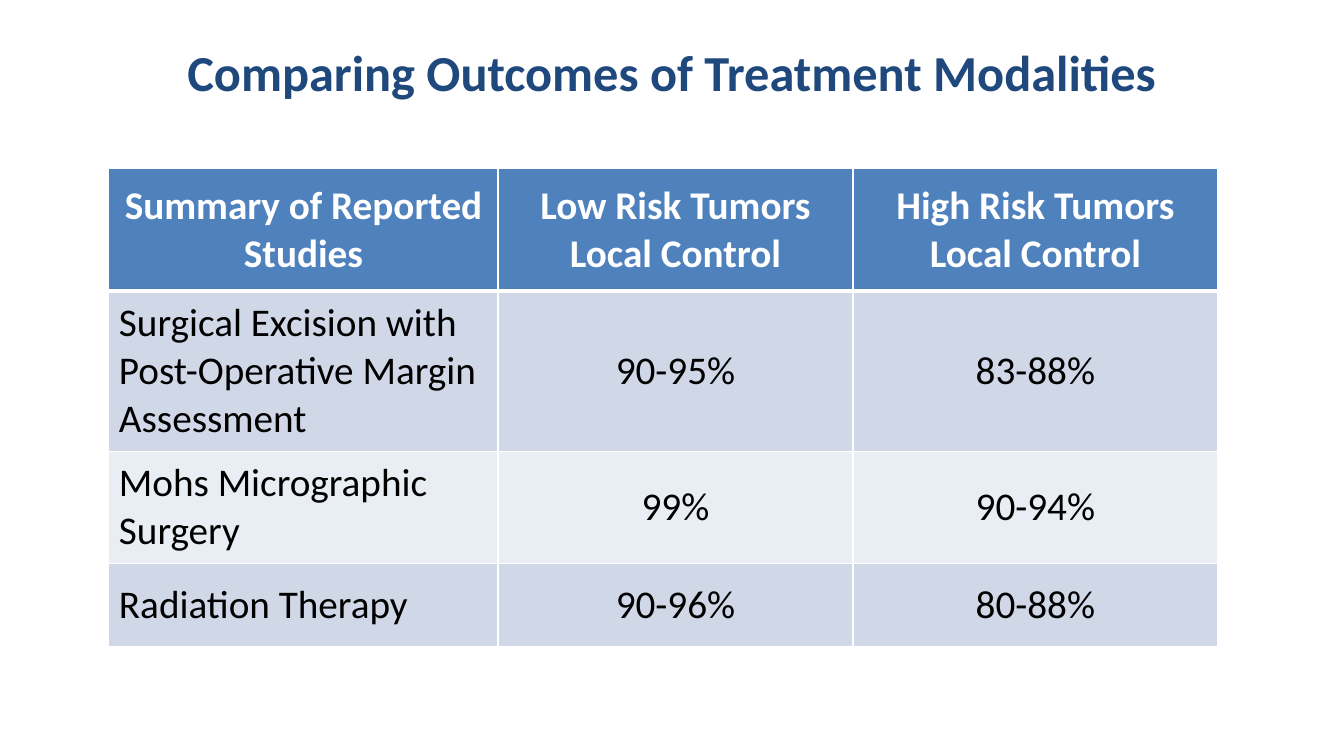
from lxml.etree import SubElement
from pptx import Presentation
from pptx.dml.color import RGBColor
from pptx.enum.text import MSO_ANCHOR as Anchor, PP_ALIGN as Align
from pptx.oxml.ns import qn
from pptx.util import Inches, Pt

FONT = "Calibri"
COLORS = {
    "title": "1F497D",
    "header": "4F81BD",
    "band_dark": "D0D8E8",
    "band_light": "E9EDF4",
    "white": "FFFFFF",
    "black": "000000",
}

SLIDE_W, SLIDE_H = 13.33, 7.5
COL_WIDTHS = [3.86, 3.52, 3.62]
ROW_HEIGHTS = [1.22, 1.59, 1.11, 0.83]
OUTCOMES = [
    ["Summary of Reported Studies", "Low Risk Tumors\nLocal Control",
     "High Risk Tumors\nLocal Control"],
    ["Surgical Excision with Post-Operative Margin Assessment", "90-95%", "83-88%"],
    ["Mohs Micrographic Surgery", "99%", "90-94%"],
    ["Radiation Therapy", "90-96%", "80-88%"],
]


def rgb(name):
    return RGBColor.from_string(COLORS[name])


def write(tf, text, size, color, bold, align):
    """Fill a text frame, one paragraph per line of text."""
    for i, line in enumerate(text.split("\n")):
        p = tf.add_paragraph() if i else tf.paragraphs[0]
        p.alignment = align
        r = p.add_run()
        r.text = line
        r.font.name, r.font.size, r.font.bold = FONT, Pt(size), bold
        r.font.color.rgb = rgb(color)


def add_title(s, text):
    width = 0.75 * SLIDE_W
    box = s.shapes.add_textbox(Inches((SLIDE_W - width) / 2), Inches(0.08),
                               Inches(width), Inches(SLIDE_H / 6))
    tf = box.text_frame
    tf.word_wrap = True
    tf.vertical_anchor = Anchor.MIDDLE
    write(tf, text, 36, "title", True, Align.CENTER)


def set_borders(cell, **widths):
    """Draw white cell edges, with widths in points by side."""
    tc_pr = cell._tc.get_or_add_tcPr()
    for side in "LRTB":
        ln = SubElement(tc_pr, qn(f"a:ln{side}"), w=str(Pt(widths.get(side, 1))))
        fill = SubElement(ln, qn("a:solidFill"))
        SubElement(fill, qn("a:srgbClr"), val=COLORS["white"])


def style_cell(cell, text, row, col):
    header = row == 0
    cell.vertical_anchor = Anchor.MIDDLE
    # Thick rule between the header and the first body row
    set_borders(cell, **({0: {"B": 3}, 1: {"T": 3}}.get(row, {})))
    band = "band_dark" if row % 2 else "band_light"
    cell.fill.solid()
    cell.fill.fore_color.rgb = rgb("header" if header else band)
    align = Align.CENTER if header or col else Align.LEFT
    write(cell.text_frame, text, 28, "white" if header else "black", header, align)


def add_outcome_table(s, rows):
    frame = s.shapes.add_table(len(rows), len(COL_WIDTHS), Inches(1.08), Inches(1.67),
                               Inches(sum(COL_WIDTHS)), Inches(sum(ROW_HEIGHTS)))
    table = frame.table
    for column, width in zip(table.columns, COL_WIDTHS):
        column.width = Inches(width)
    for row, height in zip(table.rows, ROW_HEIGHTS):
        row.height = Inches(height)
    for i, texts in enumerate(rows):
        for j, text in enumerate(texts):
            style_cell(table.cell(i, j), text, i, j)


def main():
    prs = Presentation()
    prs.slide_width, prs.slide_height = Inches(SLIDE_W), Inches(SLIDE_H)
    s = prs.slides.add_slide(prs.slide_layouts[6])
    add_title(s, "Comparing Outcomes of Treatment Modalities")
    add_outcome_table(s, OUTCOMES)
    prs.save("out.pptx")


if __name__ == "__main__":
    main()
